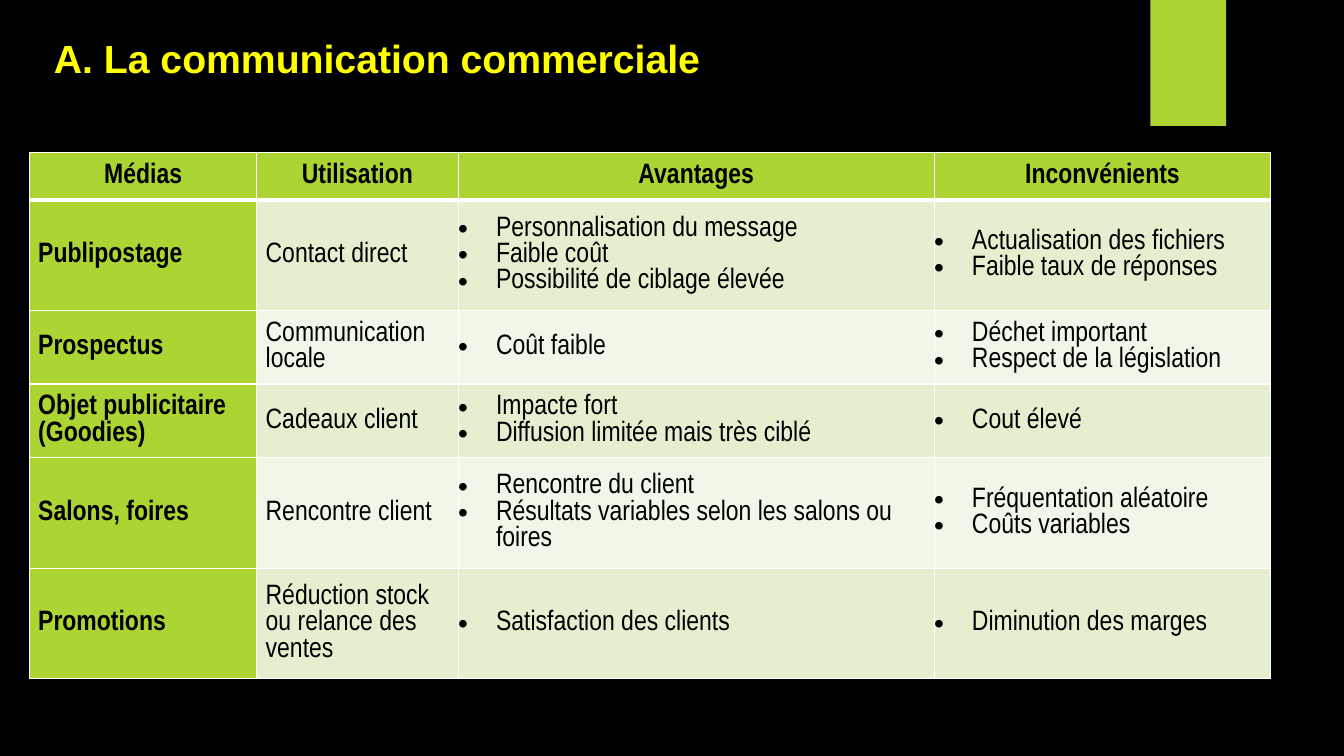
from lxml import etree
from pptx import Presentation
from pptx.dml.color import RGBColor
from pptx.enum.shapes import MSO_SHAPE
from pptx.enum.text import MSO_ANCHOR, PP_ALIGN
from pptx.oxml.ns import qn
from pptx.util import Pt

RECTANGLE = MSO_SHAPE.RECTANGLE
MIDDLE = MSO_ANCHOR.MIDDLE
CENTER, LEFT = PP_ALIGN.CENTER, PP_ALIGN.LEFT

BLACK, WHITE, YELLOW, GREEN = "000000", "FFFFFF", "FFFF00", "ACD433"
BANDS = ("E3EFCE", "F1F7E8")
COLUMN_WIDTHS = (162, 144, 340, 240.5)
ROW_HEIGHTS = (34, 79, 52.6, 52.6, 79, 79)
TEXT_INDENTS = (6, 6.5)
BULLET_INDENT = 27

HEADERS = ("Médias", "Utilisation", "Avantages", "Inconvénients")
MEDIA_ROWS = (
    ("Publipostage", "Contact direct",
     ("Personnalisation du message", "Faible coût", "Possibilité de ciblage élevée"),
     ("Actualisation des fichiers", "Faible taux de réponses")),
    ("Prospectus", "Communication locale",
     ("Coût faible",),
     ("Déchet important", "Respect de la législation")),
    ("Objet publicitaire (Goodies)", "Cadeaux client",
     ("Impacte fort", "Diffusion limitée mais très ciblé"),
     ("Cout élevé",)),
    ("Salons, foires", "Rencontre client",
     ("Rencontre du client", "Résultats variables selon les salons ou foires"),
     ("Fréquentation aléatoire", "Coûts variables")),
    ("Promotions", "Réduction stock ou relance des ventes",
     ("Satisfaction des clients",),
     ("Diminution des marges",)),
)


def color(value):
    """Turn a hex string into a colour."""
    return RGBColor.from_string(value)


def add_run(paragraph, text, font_name, size, font_color, bold):
    """Add one formatted run to a paragraph."""
    run = paragraph.add_run()
    run.text = text
    run.font.name = font_name
    run.font.size = Pt(size)
    run.font.bold = bold
    run.font.color.rgb = color(font_color)


def set_indent(paragraph, margin, bulleted):
    """Indent a paragraph, with a hanging bullet if asked."""
    properties = paragraph._p.get_or_add_pPr()
    properties.set("marL", str(Pt(margin)))
    properties.set("indent", str(Pt(-margin if bulleted else 0)))
    if bulleted:
        etree.SubElement(properties, qn("a:buFont")).set("typeface", "Arial")
        etree.SubElement(properties, qn("a:buChar")).set("char", "•")


def set_borders(cell, top, bottom):
    """Draw white cell borders with the given top and bottom widths."""
    properties = cell._tc.get_or_add_tcPr()
    for side, width in (("L", 1), ("R", 1), ("T", top), ("B", bottom)):
        line = etree.SubElement(properties, qn(f"a:ln{side}"), w=str(Pt(width)))
        fill = etree.SubElement(line, qn("a:solidFill"))
        etree.SubElement(fill, qn("a:srgbClr")).set("val", WHITE)


def fill_cell(cell, row, column, content):
    """Style one table cell and write its paragraphs."""
    is_header = row == 0
    is_bulleted = not is_header and column >= len(TEXT_INDENTS)
    is_label = is_header or column == 0
    set_borders(cell, 3 if row == 1 else 1, 3 if is_header else 1)
    cell.fill.solid()
    cell.fill.fore_color.rgb = color(GREEN if is_label else BANDS[(row - 1) % 2])
    cell.vertical_anchor = MIDDLE
    cell.margin_left = cell.margin_right = cell.margin_top = cell.margin_bottom = 0
    frame = cell.text_frame
    for index, text in enumerate(content if is_bulleted else (content,)):
        paragraph = frame.add_paragraph() if index else frame.paragraphs[0]
        paragraph.alignment = CENTER if is_header else LEFT
        if is_header:
            paragraph.space_after = Pt(3)
        else:
            margin = BULLET_INDENT if is_bulleted else TEXT_INDENTS[column]
            set_indent(paragraph, margin, is_bulleted)
        add_run(paragraph, text, "Arial Narrow", 20, BLACK, is_label)


def add_media_table(slide, left, top):
    """Place the table comparing the media."""
    rows = (HEADERS, *MEDIA_ROWS)
    table = slide.shapes.add_table(
        len(rows), len(HEADERS), Pt(left), Pt(top),
        Pt(sum(COLUMN_WIDTHS)), Pt(sum(ROW_HEIGHTS))).table
    for column, width in zip(table.columns, COLUMN_WIDTHS):
        column.width = Pt(width)
    for row, height in zip(table.rows, ROW_HEIGHTS):
        row.height = Pt(height)
    for row, contents in enumerate(rows):
        for column, content in enumerate(contents):
            fill_cell(table.cell(row, column), row, column, content)


def add_title(slide, left, top, width, height):
    """Place the slide title."""
    frame = slide.shapes.add_textbox(Pt(left), Pt(top), Pt(width), Pt(height)).text_frame
    frame.word_wrap = False
    add_run(frame.paragraphs[0], "A. La communication commerciale", "Arial", 28, YELLOW, True)


def add_tab(slide, left, top, width, height):
    """Place the green tab at the top edge."""
    shape = slide.shapes.add_shape(RECTANGLE, Pt(left), Pt(top), Pt(width), Pt(height))
    shape.shadow.inherit = False
    shape.fill.solid()
    shape.fill.fore_color.rgb = color(GREEN)
    shape.line.fill.background()


def main():
    """Build and save the presentation."""
    presentation = Presentation()
    presentation.slide_width = Pt(960)
    presentation.slide_height = Pt(540)
    slide = presentation.slides.add_slide(presentation.slide_layouts[6])
    slide.background.fill.solid()
    slide.background.fill.fore_color.rgb = color(BLACK)
    add_tab(slide, 821.8, 0, 54, 90)
    add_media_table(slide, 21.3, 108.8)
    add_title(slide, 31.5, 20.8, 481.5, 41)
    presentation.save("out.pptx")


if __name__ == "__main__":
    main()
